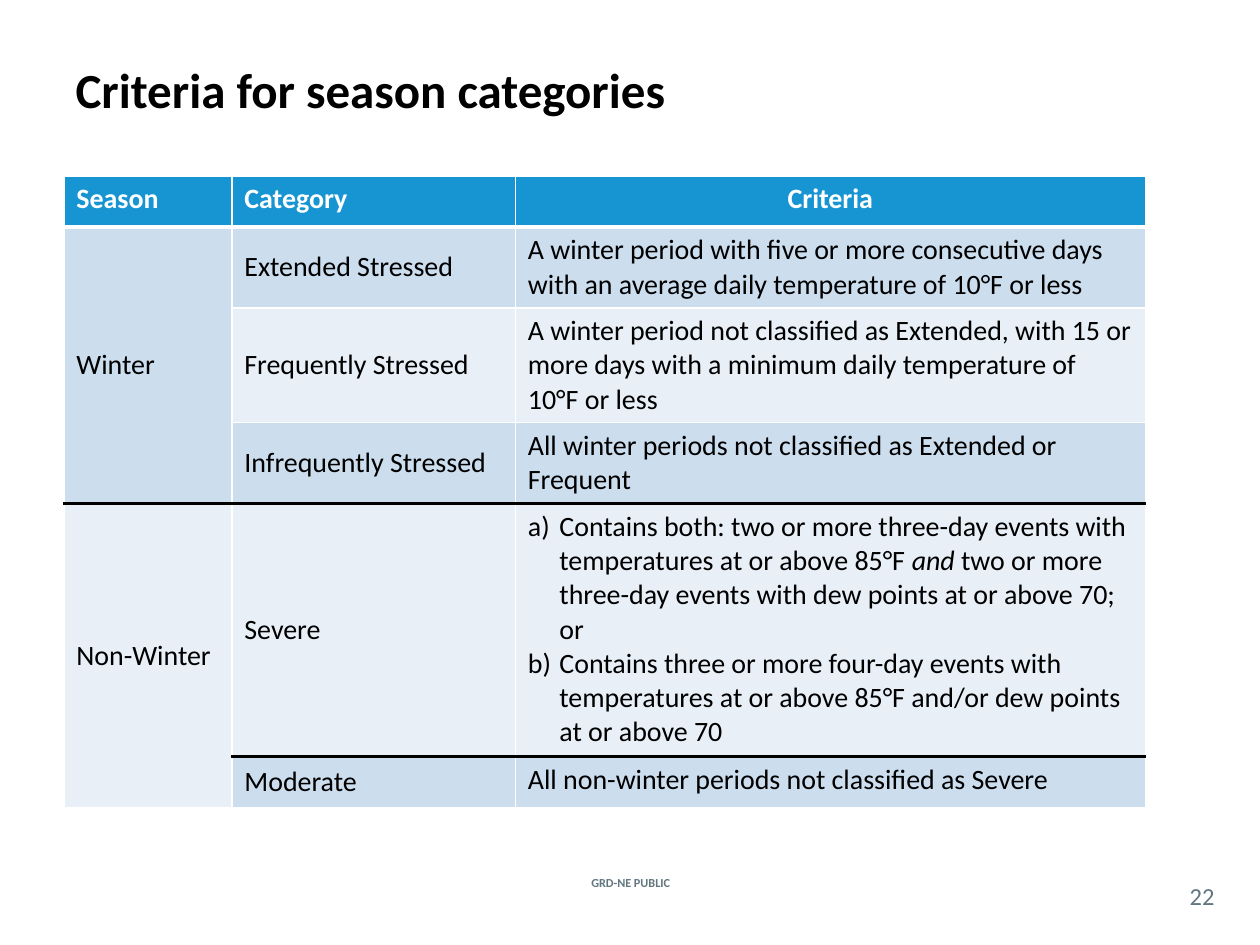
import dataclasses
from typing import Optional

import pptx
import pptx.dml.color
import pptx.enum.text
import pptx.oxml.ns
import pptx.util
from lxml import etree

Pt = pptx.util.Pt
Align = pptx.enum.text.PP_ALIGN
Anchor = pptx.enum.text.MSO_ANCHOR

FONT = "Calibri"
BLACK, WHITE, GREY = "000000", "FFFFFF", "62777F"
HEADER_FILL, BAND_FILLS = "1795D2", ("E8EFF7", "CCDDEE")
COLUMN_WIDTHS = (96, 162, 360)
ROW_HEIGHTS = (29.2, 46.2, 65.7, 46.2, 144.5, 29.2)


@dataclasses.dataclass(frozen=True)
class Line:
    """One paragraph: its runs, where odd ones are italic."""
    runs: tuple[str, ...]
    number: Optional[int] = None
    indent: float = 0
    level: int = 0


@dataclasses.dataclass(frozen=True)
class Style:
    size: float
    color: str
    bold: bool = False
    align: Align = Align.LEFT


@dataclasses.dataclass(frozen=True)
class Label:
    text: str
    left: float
    top: float
    width: float
    height: float
    style: Style


@dataclasses.dataclass(frozen=True)
class Edge:
    color: str = WHITE
    width: float = 1


def plain(text: str) -> tuple[Line, ...]:
    return (Line((text,)),)


SEVERE_CRITERIA = (
    Line(("Contains both: two or more three-day events with temperatures at or above 85°F ",
          "and", " two or more three-day events with dew points at or above 70;"), 1, 18),
    Line(("or",), indent=18, level=1),
    Line(("Contains three or more four-day events with temperatures at or above 85°F "
          "and/or dew points at or above 70",), 2, 18),
)
ROWS = (
    (plain("Season"), plain("Category"), plain("Criteria")),
    (plain("Winter"), plain("Extended Stressed"),
     plain("A winter period with five or more consecutive days with an average daily "
           "temperature of 10°F or less")),
    (None, plain("Frequently Stressed"),
     plain("A winter period not classified as Extended, with 15 or more days with a "
           "minimum daily temperature of 10°F or less")),
    (None, plain("Infrequently Stressed"),
     plain("All winter periods not classified as Extended or Frequent")),
    (plain("Non-Winter"), plain("Severe"), SEVERE_CRITERIA),
    (None, plain("Moderate"), plain("All non-winter periods not classified as Severe")),
)
SEASON_SPANS = ((1, 3), (4, 5))
LABELS = (
    Label("GRD-NE PUBLIC", 307.5, 498.2, 105.8, 12.2, Style(7, GREY, True, Align.CENTER)),
    Label("22", 671.8, 501.1, 30.2, 20.9, Style(14, GREY, False, Align.CENTER)),
)


def rgb(color: str) -> pptx.dml.color.RGBColor:
    return pptx.dml.color.RGBColor.from_string(color)


def add_element(parent, tag: str, **attributes: str):
    return etree.SubElement(parent, pptx.oxml.ns.qn(tag), attributes)


def write_line(paragraph, line: Line, style: Style) -> None:
    paragraph.alignment = style.align
    paragraph.level = line.level
    if line.indent:
        properties = paragraph._p.get_or_add_pPr()
        properties.set("marL", str(Pt(line.indent)))
        properties.set("indent", str(-Pt(line.indent) if line.number else 0))
        if line.number:
            add_element(properties, "a:buAutoNum", type="alphaLcParenR",
                        startAt=str(line.number))
        else:
            add_element(properties, "a:buNone")
    font = paragraph.font
    font.name, font.size, font.bold = FONT, Pt(style.size), style.bold
    font.color.rgb = rgb(style.color)
    for index, text in enumerate(line.runs):
        run = paragraph.add_run()
        run.text = text
        if index % 2:
            run.font.italic = True


def write_lines(text_frame, lines: tuple[Line, ...], style: Style) -> None:
    for index, line in enumerate(lines):
        paragraph = text_frame.add_paragraph() if index else text_frame.paragraphs[0]
        write_line(paragraph, line, style)


def edge_below(row: int, column: int) -> Edge:
    """Heavy white under the header, black under winter and severe rows."""
    if row == 0:
        return Edge(width=3)
    if row == 3 or (row == 4 and column > 0):
        return Edge(BLACK, 2.25)
    return Edge()


def set_borders(cell, row: int, column: int) -> None:
    properties = cell._tc.get_or_add_tcPr()
    top = edge_below(row - 1, column) if row else Edge()
    edges = {"a:lnL": Edge(), "a:lnR": Edge(), "a:lnT": top,
             "a:lnB": edge_below(row, column)}
    for tag, edge in edges.items():
        border = add_element(properties, tag, w=str(Pt(edge.width)))
        add_element(add_element(border, "a:solidFill"), "a:srgbClr", val=edge.color)


def add_criteria_table(slide) -> None:
    table = slide.shapes.add_table(
        len(ROWS), len(COLUMN_WIDTHS), Pt(36.5), Pt(100.5),
        Pt(sum(COLUMN_WIDTHS)), Pt(sum(ROW_HEIGHTS))).table
    table.horz_banding = False
    for column, width in zip(table.columns, COLUMN_WIDTHS):
        column.width = Pt(width)
    for row, height in zip(table.rows, ROW_HEIGHTS):
        row.height = Pt(height)
    for first, last in SEASON_SPANS:
        table.cell(first, 0).merge(table.cell(last, 0))

    for row, entries in enumerate(ROWS):
        header = row == 0
        for column, lines in enumerate(entries):
            cell = table.cell(row, column)
            set_borders(cell, row, column)
            cell.fill.solid()
            cell.fill.fore_color.rgb = rgb(HEADER_FILL if header else BAND_FILLS[row % 2])
            if not lines:
                continue
            centred = header and column == 2
            cell.vertical_anchor = Anchor.TOP if header or column == 2 else Anchor.MIDDLE
            style = Style(16, WHITE if header else BLACK, header,
                          Align.CENTER if centred else Align.LEFT)
            write_lines(cell.text_frame, lines, style)


def add_label(slide, label: Label) -> None:
    shape = slide.shapes.add_textbox(
        Pt(label.left), Pt(label.top), Pt(label.width), Pt(label.height))
    frame = shape.text_frame
    frame.word_wrap = True
    frame.vertical_anchor = Anchor.MIDDLE
    frame.margin_left = frame.margin_right = frame.margin_top = frame.margin_bottom = 0
    write_lines(frame, plain(label.text), label.style)


def main() -> None:
    presentation = pptx.Presentation()
    presentation.slide_width, presentation.slide_height = Pt(720), Pt(540)
    slide = presentation.slides.add_slide(presentation.slide_layouts[5])

    # Footer and slide number
    for label in LABELS:
        add_label(slide, label)

    # Title
    title = slide.shapes.title
    title.left, title.top, title.width, title.height = Pt(36), Pt(6), Pt(648), Pt(90)
    title.text_frame.vertical_anchor = Anchor.MIDDLE
    write_lines(title.text_frame, plain("Criteria for season categories"),
                Style(28, BLACK, True))

    # Season criteria
    add_criteria_table(slide)
    presentation.save("out.pptx")


if __name__ == "__main__":
    main()
